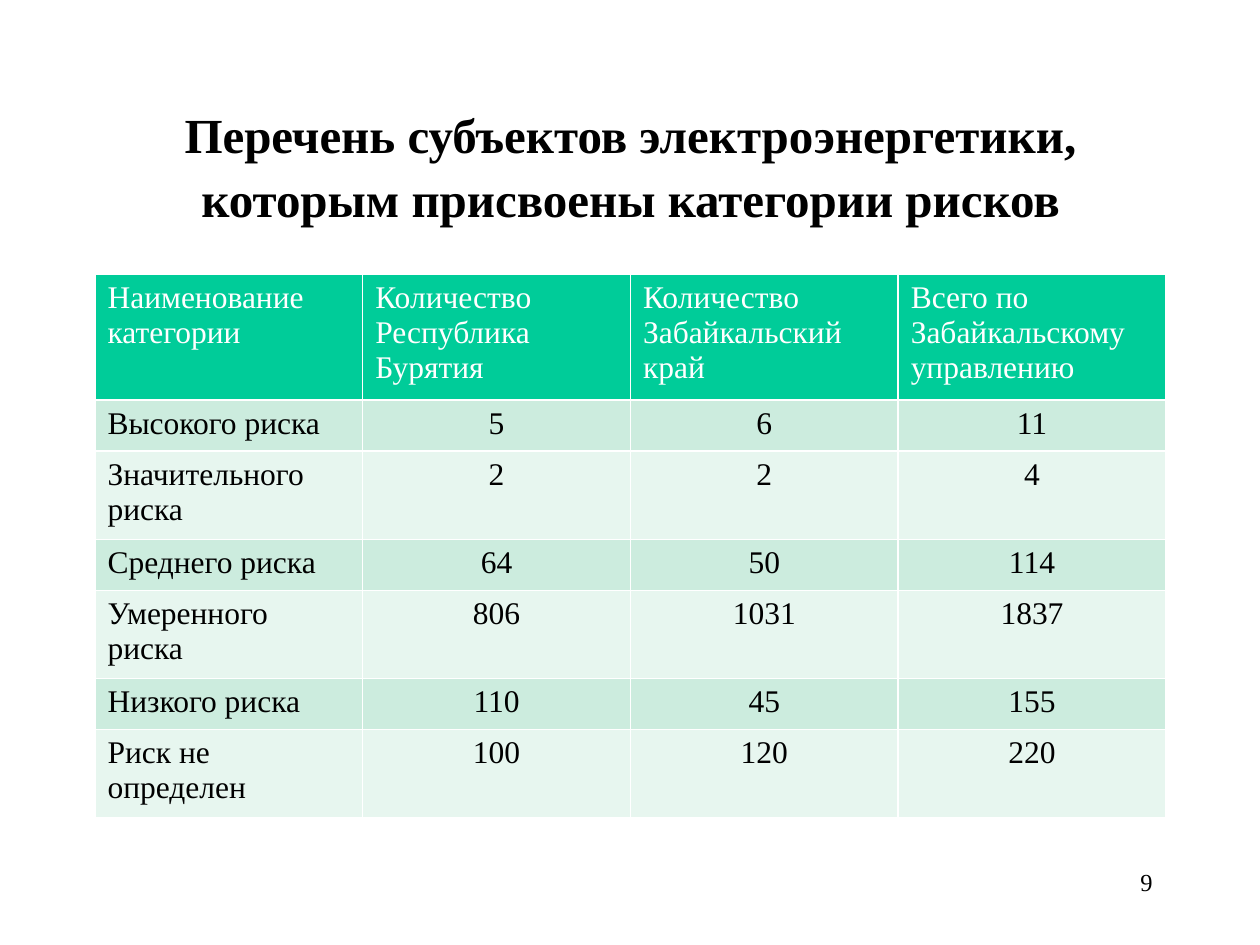
from dataclasses import dataclass

from lxml.etree import SubElement
from pptx import Presentation
from pptx.dml.color import RGBColor
from pptx.enum.text import MSO_ANCHOR as Anchor, PP_ALIGN as Align
from pptx.oxml.ns import qn
from pptx.util import Emu, Pt

PX = 914400 // 126  # EMU in one px


@dataclass(frozen=True)
class Theme:
    font: str = "Times New Roman"
    ink: str = "000000"
    white: str = "FFFFFF"
    header: str = "00CC99"
    bands: tuple = ("CCECDE", "E7F6EF")
    title_size: int = 28
    table_size: int = 18
    number_size: int = 14


THEME = Theme()

HEADER = ["Наименование категории", "Количество Республика Бурятия",
          "Количество Забайкальский край", "Всего по Забайкальскому управлению"]
RISKS = [
    ("Высокого риска", 5, 6, 11),
    ("Значительного риска", 2, 2, 4),
    ("Среднего риска", 64, 50, 114),
    ("Умеренного риска", 806, 1031, 1837),
    ("Низкого риска", 110, 45, 155),
    ("Риск не определен", 100, 120, 220),
]
ROW_HEIGHTS = [116, 51, 83, 51, 83, 51, 82]


def px(*lengths):
    return [Emu(n * PX) for n in lengths]


def write(tf, text, size, color=THEME.ink, bold=False, align=Align.LEFT, spacing=None):
    p = tf.paragraphs[0]
    p.alignment = align
    if spacing:
        p.line_spacing = spacing
    r = p.add_run()
    r.text = text
    r.font.name = THEME.font
    r.font.size = Pt(size)
    r.font.bold = bold
    r.font.color.rgb = RGBColor.from_string(color)


def add_text(s, box, text, size, anchor=Anchor.TOP, **fmt):
    tf = s.shapes.add_textbox(*px(*box)).text_frame
    tf.word_wrap = True
    tf.vertical_anchor = anchor
    write(tf, text, size, **fmt)


def style_cell(cell, fill):
    # Borders must come before the fill in the cell properties
    tc_pr = cell._tc.get_or_add_tcPr()
    for side in ("a:lnL", "a:lnR", "a:lnT", "a:lnB"):
        ln = SubElement(tc_pr, qn(side), w=str(Pt(1)))
        solid = SubElement(ln, qn("a:solidFill"))
        SubElement(solid, qn("a:srgbClr"), val=THEME.white)
    cell.fill.solid()
    cell.fill.fore_color.rgb = RGBColor.from_string(fill)


def add_risk_table(s, box):
    rows = [HEADER, *RISKS]
    table = s.shapes.add_table(len(rows), len(HEADER), *px(*box)).table
    for i, values in enumerate(rows):
        table.rows[i].height = px(ROW_HEIGHTS[i])[0]
        is_header = i == 0
        fill = THEME.header if is_header else THEME.bands[(i - 1) % 2]
        for j, value in enumerate(values):
            cell = table.cell(i, j)
            style_cell(cell, fill)
            write(cell.text_frame, str(value), THEME.table_size,
                  color=THEME.white if is_header else THEME.ink,
                  align=Align.LEFT if is_header or j == 0 else Align.CENTER)


def build_slide(prs):
    s = prs.slides.add_slide(prs.slide_layouts[6])
    # Title
    add_text(s, (95, 84, 1071, 158),
             "Перечень субъектов электроэнергетики, которым присвоены категории рисков",
             THEME.title_size, anchor=Anchor.MIDDLE, bold=True,
             align=Align.CENTER, spacing=1.09)
    # Risk categories by region
    add_risk_table(s, (95, 274, 1071, sum(ROW_HEIGHTS)))
    # Slide number
    add_text(s, (903, 861, 262, 63), "9", THEME.number_size, align=Align.RIGHT)


def main():
    prs = Presentation()
    prs.slide_width, prs.slide_height = px(1260, 945)
    build_slide(prs)
    prs.save("out.pptx")


if __name__ == "__main__":
    main()
